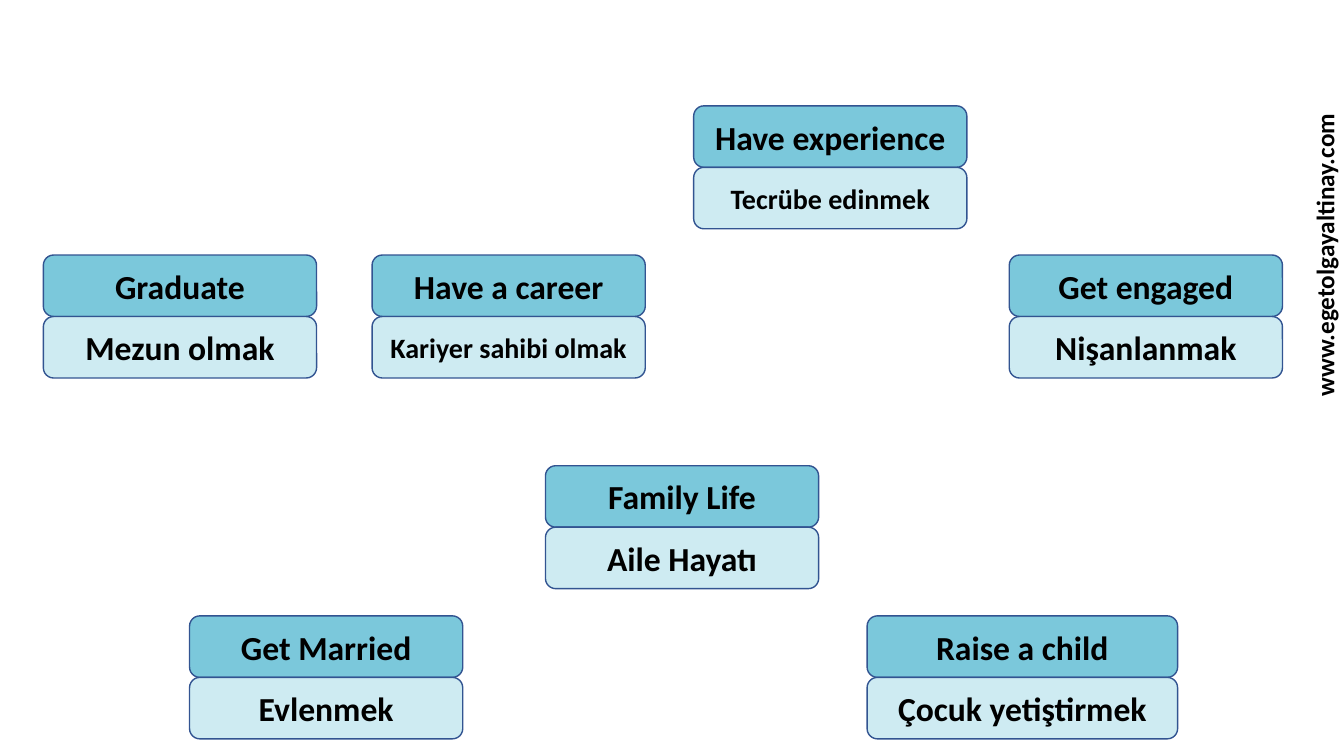
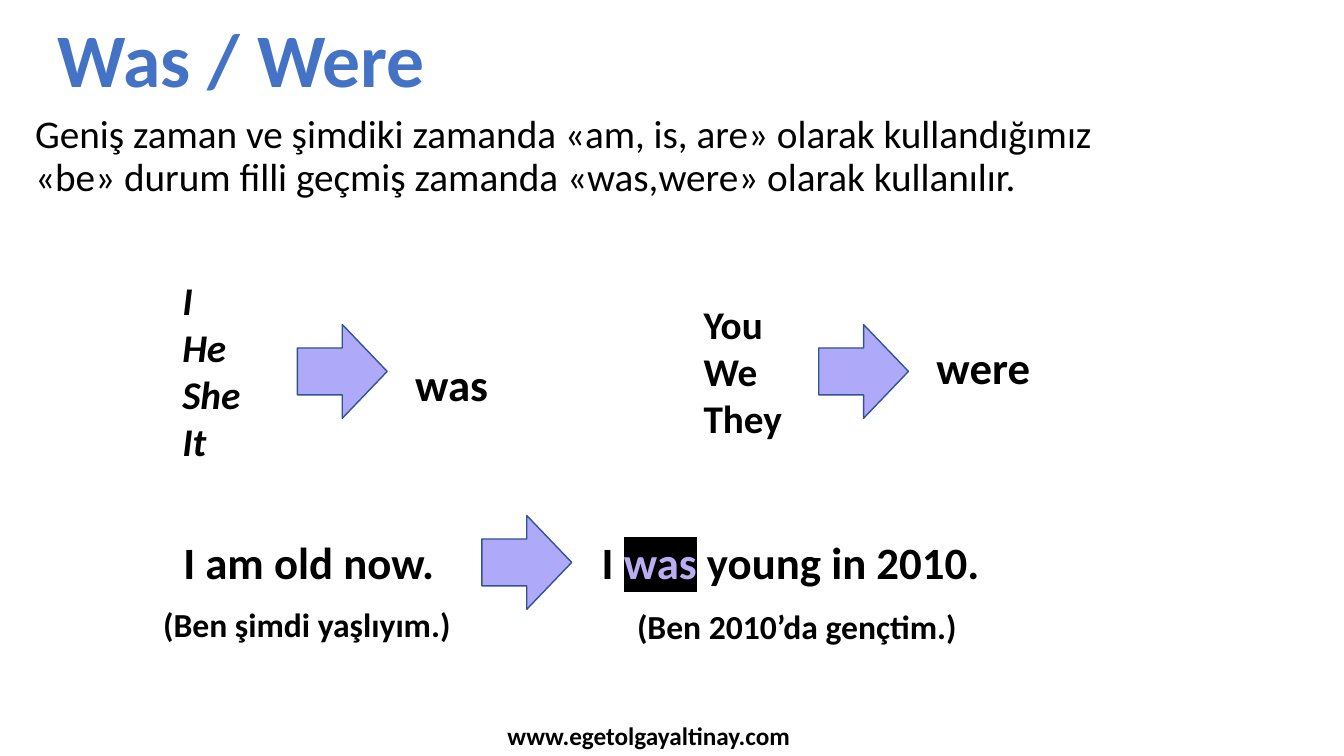
from lxml import etree
from pptx import Presentation
from pptx.dml.color import RGBColor
from pptx.enum.shapes import MSO_SHAPE
from pptx.enum.text import MSO_ANCHOR, PP_ALIGN
from pptx.oxml.ns import qn
from pptx.util import Inches, Pt

COLORS = {
    "text": "000000",
    "title": "4472C4",
    "english": "7BC8DB",
    "turkish": "CEEBF2",
    "outline": "325491",
    "arrow": "AFA9F9",
    "accent": "BAADF1",
    "marker": "000000",
}
FONT = "Calibri"
SITE = "www.egetolgayaltinay.com"
CARD_WIDTH, ROW = 2.71, 0.61
ARROW_WIDTH, ARROW_HEIGHT = 0.89, 0.93

# left, top, width, English, Turkish, Turkish text size
CARDS = [
    (0.43, 2.53, CARD_WIDTH, "Graduate", "Mezun olmak", 24),
    (3.69, 2.53, CARD_WIDTH, "Have a career", "Kariyer sahibi olmak", 20),
    (6.88, 1.05, CARD_WIDTH, "Have experience", "Tecrübe edinmek", 20),
    (10.01, 2.53, CARD_WIDTH, "Get engaged", "Nişanlanmak", 24),
    (1.88, 6.11, CARD_WIDTH, "Get Married", "Evlenmek", 24),
    (5.41, 4.62, CARD_WIDTH, "Family Life", "Aile Hayatı", 24),
    (8.6, 6.11, 3.08, "Raise a child", "Çocuk yetiştirmek", 24),
]


def color(name):
    return RGBColor.from_string(COLORS[name])


def mark(run, name):
    """Put a highlight behind a run."""
    light = etree.Element(qn("a:highlight"))
    etree.SubElement(light, qn("a:srgbClr")).set("val", COLORS[name])
    run.font.fill._xPr.find(qn("a:solidFill")).addnext(light)


def write(frame, lines, size=24, bold=True, italic=False, ink="text",
          align=PP_ALIGN.LEFT, anchor=MSO_ANCHOR.TOP, spacing=None):
    """Fill a frame; each line is a string or a list of (text, is marked)."""
    frame.word_wrap = True
    frame.vertical_anchor = anchor
    for i, line in enumerate(lines):
        para = frame.paragraphs[0] if i == 0 else frame.add_paragraph()
        para.alignment = align
        if spacing:
            para.line_spacing = spacing
        parts = [(line, False)] if isinstance(line, str) else line
        for text, marked in parts:
            run = para.add_run()
            run.text = text
            font = run.font
            font.name, font.size = FONT, Pt(size)
            font.bold, font.italic = bold, italic
            font.color.rgb = color("accent" if marked else ink)
            if marked:
                mark(run, "marker")


def label(slide, box, *lines, **style):
    shape = slide.shapes.add_textbox(*map(Inches, box))
    write(shape.text_frame, lines, **style)
    return shape


def block(slide, kind, box, fill):
    shape = slide.shapes.add_shape(kind, *map(Inches, box))
    shape.shadow.inherit = False
    shape.fill.solid()
    shape.fill.fore_color.rgb = color(fill)
    shape.line.color.rgb = color("outline")
    shape.line.width = Pt(1)
    return shape


def arrow(slide, left, middle):
    box = (left, middle - ARROW_HEIGHT / 2, ARROW_WIDTH, ARROW_HEIGHT)
    block(slide, MSO_SHAPE.RIGHT_ARROW, box, "arrow")


def site(slide, left, top, turn=0):
    shape = label(slide, (left, top, 4.43, 0.4), SITE, size=18,
                  align=PP_ALIGN.CENTER)
    shape.rotation = turn


def card(slide, left, top, width, english, turkish, size):
    rows = [(english, "english", 24), (turkish, "turkish", size)]
    for i, (text, fill, points) in enumerate(rows):
        box = (left, top + i * ROW, width, ROW)
        shape = block(slide, MSO_SHAPE.ROUNDED_RECTANGLE, box, fill)
        write(shape.text_frame, [text], size=points,
              align=PP_ALIGN.CENTER, anchor=MSO_ANCHOR.MIDDLE)


def rule(slide, box, subjects, verb, drop, italic=False):
    """Subjects, an arrow at mid height, and the verb `drop` below the top."""
    left, top, width, height = box
    label(slide, box, *subjects, size=28, italic=italic)
    arrow(slide, left + 1.24, top + height / 2)
    label(slide, (left + 2.31, top + drop, 2.07, 0.64), verb, size=32)


def sample(slide, box, line, meaning, shift, drop):
    """A sentence with its meaning set off by `shift` and `drop`."""
    left, top, width, height = box
    label(slide, box, line, size=32)
    label(slide, (left + shift, top + drop, width, 0.5), meaning)


def life_slide(slide):
    for item in CARDS:
        card(slide, *item)
    site(slide, 10.92, 2.33, turn=270)


def verb_slide(slide):
    label(slide, (0.47, -0.1, 11.5, 1.45), "Was / Were", size=54,
          ink="title", anchor=MSO_ANCHOR.MIDDLE, spacing=0.9)
    label(slide, (0.25, 1.09, 11.5, 1.3),
          "Geniş zaman ve şimdiki zamanda «am, is, are» olarak "
          "kullandığımız «be» durum filli geçmiş zamanda «was,were» "
          "olarak kullanılır.", size=28, bold=False, spacing=0.9)
    rule(slide, (1.71, 2.69, 2.9, 1.99), ["I", "He", "She", "It"],
         "was", 0.8, italic=True)
    rule(slide, (6.88, 2.93, 4.15, 1.51), ["You", "We", "They"],
         "were", 0.39)
    sample(slide, (1.72, 5.26, 3.24, 0.64), "I am old now.",
           "(Ben şimdi yaşlıyım.)", -0.2, 0.68)
    arrow(slide, 4.78, 5.58)
    sample(slide, (5.87, 5.26, 5.16, 0.64),
           [("I ", False), ("was", True), (" young in 2010.", False)],
           "(Ben 2010’da gençtim.)", 0.35, 0.7)
    site(slide, 4.22, 7.1)


def main():
    deck = Presentation()
    deck.slide_width, deck.slide_height = Inches(13.33), Inches(7.5)
    for build in (life_slide, verb_slide):
        build(deck.slides.add_slide(deck.slide_layouts[6]))
    deck.save("out.pptx")


if __name__ == "__main__":
    main()
